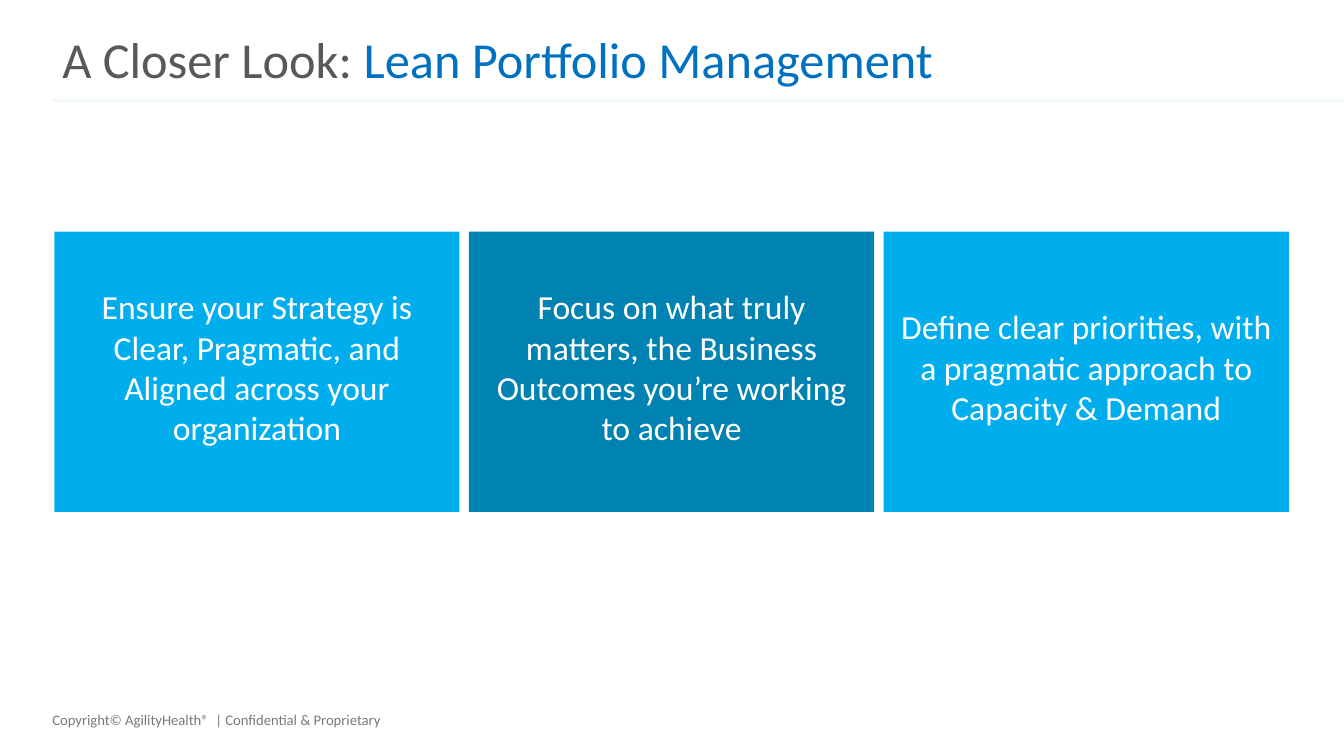
from dataclasses import dataclass

from lxml import etree
from pptx import Presentation
from pptx import util as u
from pptx.dml.color import RGBColor
from pptx.enum import shapes, text
from pptx.oxml import ns


@dataclass(frozen=True)
class Theme:
    font: str = "Calibri"
    title_size: float = 36
    card_size: float = 24
    footer_size: float = 10.5
    title: str = "58595B"
    accent: str = "0070C0"
    footer: str = "7A7A7A"
    rule: str = "F3FCF4"
    light_card: str = "00AEEE"
    dark_card: str = "0082B2"
    card_text: str = "FFFFFF"


class SlideBuilder:
    def __init__(self, slide, theme):
        self.slide = slide
        self.theme = theme

    def add_text(self, frame, runs, size, align=text.PP_ALIGN.LEFT,
                 anchor=text.MSO_ANCHOR.TOP, insets=(0.25, 0.13, 0.25, 0.13), spacing=None):
        """Fill a text frame with (words, colour) runs; insets in cm."""
        frame.word_wrap = True
        frame.vertical_anchor = anchor
        (frame.margin_left, frame.margin_top,
         frame.margin_right, frame.margin_bottom) = map(u.Cm, insets)
        para = frame.paragraphs[0]
        para.alignment = align
        if spacing:
            para.line_spacing = spacing
        for words, colour in runs:
            span = para.add_run()
            span.text = words
            span.font.name = self.theme.font
            span.font.size = u.Pt(size)
            span.font.color.rgb = RGBColor.from_string(colour)

    def text_box(self, bounds, runs, size, **layout):
        box = self.slide.shapes.add_textbox(*map(u.Cm, bounds))
        self.add_text(box.text_frame, runs, size, **layout)

    def card(self, bounds, words, fill):
        box = self.slide.shapes.add_shape(shapes.MSO_SHAPE.RECTANGLE, *map(u.Cm, bounds))
        box.shadow.inherit = False
        box.fill.solid()
        box.fill.fore_color.rgb = RGBColor.from_string(fill)
        box.line.fill.background()
        self.add_text(box.text_frame, [(words, self.theme.card_text)], self.theme.card_size,
                      align=text.PP_ALIGN.CENTER, anchor=text.MSO_ANCHOR.MIDDLE,
                      insets=(0.25, 0, 0.25, 0.25))

    def rule(self, left, right, top, colour, width):
        line = self.slide.shapes.add_connector(
            shapes.MSO_CONNECTOR.STRAIGHT, *map(u.Cm, (left, top, right, top)))
        line.line.color.rgb = RGBColor.from_string(colour)
        line.line.width = u.Pt(width)
        etree.SubElement(line.element.spPr, ns.qn("a:effectLst"))


def main():
    theme = Theme()
    slide_width = 33.87
    deck = Presentation()
    deck.slide_width, deck.slide_height = u.Cm(slide_width), u.Cm(19.05)
    page = SlideBuilder(deck.slides.add_slide(deck.slide_layouts[6]), theme)

    # Footer and header rule
    page.text_box((1.07, 17.78, 11.43, 0.71),
                  [("Copyright© AgilityHealth®  | Confidential & Proprietary", theme.footer)],
                  theme.footer_size)
    page.rule(1.32, slide_width, 2.54, theme.rule, 2)

    # Title
    page.text_box((1.32, 0.69, 31.22, 1.78),
                  [("A Closer Look: ", theme.title),
                   ("Lean Portfolio Management", theme.accent)],
                  theme.title_size, anchor=text.MSO_ANCHOR.MIDDLE, spacing=0.9)

    # Row of cards
    cards = [
        ("Ensure your Strategy is Clear, Pragmatic, and Aligned across your organization",
         theme.light_card),
        ("Focus on what truly matters, the Business Outcomes you’re working to achieve",
         theme.dark_card),
        ("Define clear priorities, with a pragmatic approach to Capacity & Demand",
         theme.light_card),
    ]
    card_width, gap = 10.21, 0.24
    for index, (words, fill) in enumerate(cards):
        left = 1.37 + index * (card_width + gap)
        page.card((left, 5.84, card_width, 7.06), words, fill)

    deck.save("out.pptx")


if __name__ == "__main__":
    main()
